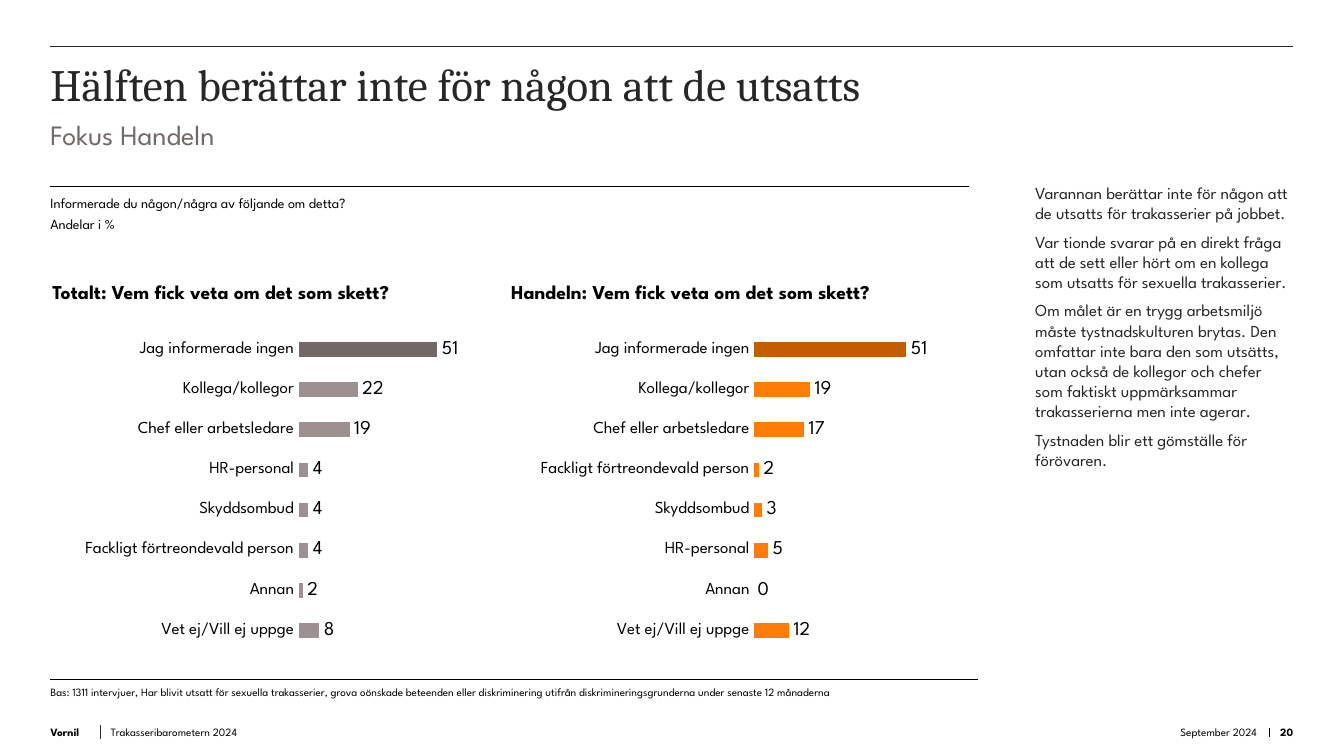
from typing import NamedTuple

from lxml.etree import SubElement
from pptx import Presentation
from pptx.chart.data import CategoryChartData
from pptx.dml.color import RGBColor
from pptx.enum.chart import XL_CHART_TYPE, XL_LABEL_POSITION, XL_TICK_MARK
from pptx.enum.shapes import MSO_CONNECTOR
from pptx.enum.text import MSO_ANCHOR, PP_ALIGN
from pptx.oxml import parse_xml
from pptx.oxml.ns import nsdecls, qn
from pptx.slide import Slide
from pptx.util import Cm, Pt

SANS = "League Spartan"
SERIF = "Cambria"
BLACK, DARK, GREY, WHITE = "000000", "282626", "736868", "FFFFFF"
LEFT, RIGHT = 1.27, 32.59
SIDE = 26.09
FOOT = 18.19


class Rule(NamedTuple):
    x1: float
    y1: float
    x2: float
    y2: float
    color: str = BLACK


class Label(NamedTuple):
    x: float
    y: float
    w: float
    h: float
    lines: list[str]
    size: int
    color: str = BLACK
    bold: bool = False
    font: str = SANS
    align: PP_ALIGN = PP_ALIGN.LEFT
    anchor: MSO_ANCHOR = MSO_ANCHOR.TOP
    inset: float = 0
    after: int = 0


class Bars(NamedTuple):
    x: float
    plot: tuple[float, float, float, float]
    color: str
    accent: str
    data: dict[str, int]


RULES = [
    Rule(LEFT, 1.17, RIGHT, 1.17, DARK),
    Rule(LEFT, 4.7, 24.43, 4.7),
    Rule(LEFT, 17.12, 24.64, 17.12),
    Rule(2.54, 18.62, 2.54, 18.26, DARK),
    Rule(31.98, 18.34, 31.98, 18.57),
]

STORY = [
    "Varannan berättar inte för någon att de utsatts för trakasserier på jobbet.",
    "Var tionde svarar på en direkt fråga att de sett eller hört om en kollega "
    "som utsatts för sexuella trakasserier.",
    "Om målet är en trygg arbetsmiljö måste tystnadskulturen brytas. Den omfattar "
    "inte bara den som utsätts, utan också de kollegor och chefer som faktiskt "
    "uppmärksammar trakasserierna men inte agerar.",
    "Tystnaden blir ett gömställe för förövaren.",
]
BASE = ("Bas: 1311 intervjuer, Har blivit utsatt för sexuella trakasserier, grova "
        "oönskade beteenden eller diskriminering utifrån diskrimineringsgrunderna "
        "under senaste 12 månaderna")


def foot(x: float, w: float, text: str, bold: bool = False,
         align: PP_ALIGN = PP_ALIGN.LEFT) -> Label:
    return Label(x, FOOT, w, 0.43, [text], 8, bold=bold, align=align,
                 anchor=MSO_ANCHOR.BOTTOM)


LABELS = [
    Label(LEFT, 1.17, 31.3, 1.8, ["Hälften berättar inte för någon att de utsatts"],
          32, DARK, font=SERIF, inset=0.25),
    Label(LEFT, 2.95, 31.3, 1.17, ["Fokus Handeln"], 20, GREY),
    Label(LEFT, 4.9, 22.6, 0.46,
          ["Informerade du någon/några av följande om detta?"], 10, after=6),
    Label(LEFT, 5.44, 17.4, 0.46, ["Andelar i %"], 10, after=6),
    Label(1.32, 7.06, 9.7, 0.61, ["Totalt: Vem fick veta om det som skett?"],
          14, bold=True),
    Label(12.88, 7.06, 11, 0.61, ["Handeln: Vem fick veta om det som skett?"],
          14, bold=True),
    Label(SIDE, 4.6, 6.48, 12.62, STORY, 12, DARK, after=6),
    Label(LEFT, 17.27, 24.18, 0.53, [BASE], 8, after=6),
    foot(LEFT, 1.27, "Vornil", bold=True),
    foot(2.79, 19.81, "Trakasseribarometern 2024"),
    foot(SIDE, 5.59, "September 2024", align=PP_ALIGN.RIGHT),
    foot(31.98, 0.61, "20", bold=True, align=PP_ALIGN.RIGHT),
]

CHARTS = [
    Bars(LEFT, (0.462, 0.09, 0.512, 0.873), "9C9090", GREY, {
        "Jag informerade ingen": 51,
        "Kollega/kollegor": 22,
        "Chef eller arbetsledare": 19,
        "HR-personal": 4,
        "Skyddsombud": 4,
        "Fackligt förtreondevald person": 4,
        "Annan": 2,
        "Vet ej/Vill ej uppge": 8,
    }),
    Bars(13.06, (0.439, 0.09, 0.561, 0.873), "FF7D04", "C25E00", {
        "Jag informerade ingen": 51,
        "Kollega/kollegor": 19,
        "Chef eller arbetsledare": 17,
        "Fackligt förtreondevald person": 2,
        "Skyddsombud": 3,
        "HR-personal": 5,
        "Annan": 0,
        "Vet ej/Vill ej uppge": 12,
    }),
]


def rgb(code: str) -> RGBColor:
    return RGBColor.from_string(code)


def style(font, size: int, color: str = BLACK, name: str = SANS,
          bold: bool = False) -> None:
    font.name, font.size, font.bold = name, Pt(size), bold
    font.color.rgb = rgb(color)


def draw_rule(slide: Slide, rule: Rule) -> None:
    ends = [Cm(v) for v in rule[:4]]
    line = slide.shapes.add_connector(MSO_CONNECTOR.STRAIGHT, *ends)
    line.line.color.rgb = rgb(rule.color)
    line.line.width = Pt(0.5)
    SubElement(line.element.spPr, qn("a:effectLst"))


def draw_label(slide: Slide, label: Label) -> None:
    box = slide.shapes.add_textbox(*(Cm(v) for v in label[:4]))
    frame = box.text_frame
    frame.word_wrap = True
    frame.vertical_anchor = label.anchor
    frame.margin_left = frame.margin_right = frame.margin_bottom = 0
    frame.margin_top = Cm(label.inset)
    frame.text = "\n".join(label.lines)
    for par in frame.paragraphs:
        par.alignment = label.align
        par.space_after = Pt(label.after)
        for run in par.runs:
            style(run.font, label.size, label.color, label.font, label.bold)


def place_plot(chart, plot: tuple[float, float, float, float]) -> None:
    """Fix the inner plot area as fractions of the chart."""
    area = chart.element.xpath("c:chart/c:plotArea")[0]
    for old in area.findall(qn("c:layout")):
        area.remove(old)
    parts = "".join(f'<c:{k}Mode val="edge"/>' for k in "xy")
    parts += "".join(f'<c:{k} val="{v}"/>' for k, v in zip("xywh", plot))
    area.insert(0, parse_xml(
        f'<c:layout {nsdecls("c")}><c:manualLayout><c:layoutTarget val="inner"/>'
        f'{parts}</c:manualLayout></c:layout>'))


def paint(part, color: str) -> None:
    part.format.fill.solid()
    part.format.fill.fore_color.rgb = rgb(color)
    part.format.line.color.rgb = rgb(WHITE)
    part.format.line.width = Pt(0.75)


def draw_bars(slide: Slide, bars: Bars) -> None:
    data = CategoryChartData(number_format="0")
    data.categories = list(bars.data)
    data.add_series("Series 1", list(bars.data.values()))
    chart = slide.shapes.add_chart(
        XL_CHART_TYPE.BAR_CLUSTERED, Cm(bars.x), Cm(7.47), Cm(13.51), Cm(9.27),
        data).chart
    chart.has_title = chart.has_legend = False
    style(chart.font, 14)
    place_plot(chart, bars.plot)

    cats = chart.category_axis
    cats.reverse_order = True
    cats.major_tick_mark = cats.minor_tick_mark = XL_TICK_MARK.NONE
    cats.format.line.fill.background()
    style(cats.tick_labels.font, 12)

    vals = chart.value_axis
    vals.minimum_scale, vals.maximum_scale = 0, 100
    vals.has_major_gridlines = vals.visible = False

    plot = chart.plots[0]
    plot.gap_width = 153
    plot.vary_by_categories = False
    series = plot.series[0]
    series.invert_if_negative = False
    paint(series, bars.color)
    paint(series.points[0], bars.accent)

    tags = series.data_labels
    tags.show_value = True
    tags.number_format, tags.number_format_is_linked = "0", False
    tags.position = XL_LABEL_POSITION.OUTSIDE_END
    style(tags.font, 14)


def main() -> None:
    deck = Presentation()
    deck.slide_width, deck.slide_height = Cm(33.87), Cm(19.05)
    slide = deck.slides.add_slide(deck.slide_layouts[6])
    for rule in RULES:
        draw_rule(slide, rule)
    for bars in CHARTS:
        draw_bars(slide, bars)
    for label in LABELS:
        draw_label(slide, label)
    deck.save("out.pptx")


if __name__ == "__main__":
    main()
